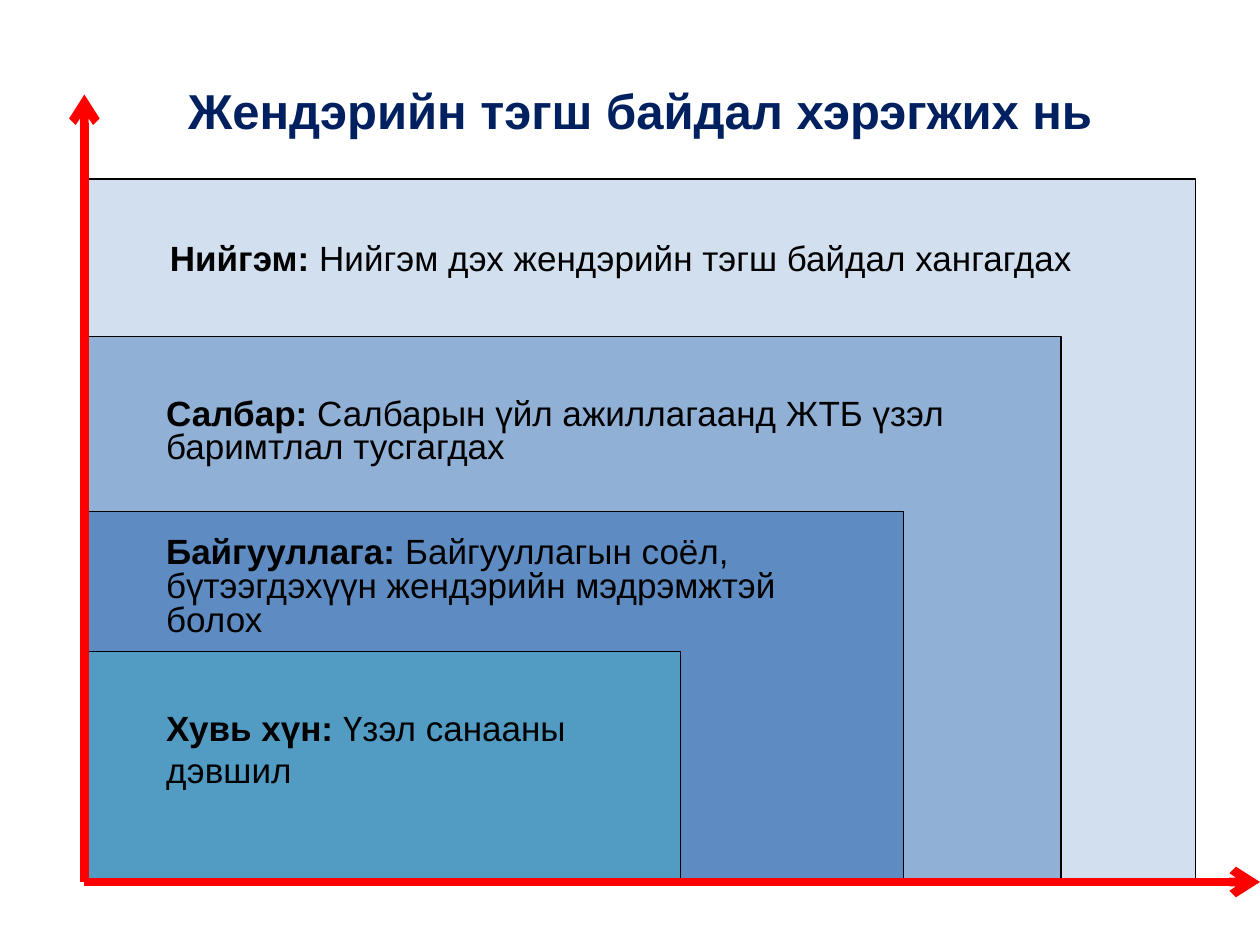
from lxml.etree import SubElement
from pptx import Presentation
from pptx.dml.color import RGBColor
from pptx.enum.shapes import MSO_CONNECTOR, MSO_SHAPE
from pptx.enum.text import MSO_ANCHOR, MSO_AUTO_SIZE, PP_ALIGN
from pptx.oxml.ns import qn
from pptx.util import Inches, Pt

COLORS = {
    "title": "002060",
    "text": "000000",
    "border": "000000",
    "blue": "4F81BD",
    "teal": "33CCCC",
    "axis": "FF0000",
}
FONT = "Arial"
ORIGIN_X, ORIGIN_Y = 0.67, 7.0

# Nested levels, outermost first: top, width, fill colour, opacity in percent
LEVELS = [
    (1.42, 8.82, "blue", 25),
    (2.67, 7.75, "blue", 49),
    (4.06, 6.5, "blue", 76),
    (5.17, 4.73, "teal", 26),
]

# Level labels: left, top, width, height, line spacing, term, description
LABELS = [
    (1.22, 5.56, 3.55, 0.77, 1.0, "Хувь хүн:", " Үзэл санааны дэвшил"),
    (1.22, 4.22, 5.43, 1.36, 0.8, "Байгууллага:",
     " Байгууллагын соёл, бүтээгдэхүүн жендэрийн мэдрэмжтэй болох"),
    (1.22, 3.12, 7.11, 1.09, 0.8, "Салбар:",
     " Салбарын үйл ажиллагаанд ЖТБ үзэл баримтлал тусгагдах"),
    (1.25, 1.83, 8.17, 0.44, 1.0, "Нийгэм:",
     " Нийгэм дэх жендэрийн тэгш байдал хангагдах"),
]


def rgb(name):
    return RGBColor.from_string(COLORS[name])


def style_font(font, size, color):
    font.name = FONT
    font.size = Pt(size)
    font.color.rgb = rgb(color)


def add_title(slide, left, top, width, height):
    title = slide.shapes.title
    title.left, title.top = Inches(left), Inches(top)
    title.width, title.height = Inches(width), Inches(height)
    tf = title.text_frame
    tf.text = "Жендэрийн тэгш байдал хэрэгжих нь"
    tf.vertical_anchor = MSO_ANCHOR.MIDDLE
    p = tf.paragraphs[0]
    p.alignment = PP_ALIGN.CENTER
    style_font(p.font, 28, "title")
    p.font.bold = True


def add_level(slide, left, top, width, height, color, opacity):
    sp = slide.shapes.add_shape(MSO_SHAPE.RECTANGLE, Inches(left), Inches(top),
                                Inches(width), Inches(height))
    sp.shadow.inherit = False
    sp.fill.solid()
    sp.fill.fore_color.rgb = rgb(color)
    fill_color = sp._element.spPr.find(qn("a:solidFill"))[0]
    SubElement(fill_color, qn("a:alpha"), val=str(opacity * 1000))
    sp.line.color.rgb = rgb("border")
    sp.line.width = Pt(0.75)


def add_label(slide, left, top, width, height, spacing, term, description):
    box = slide.shapes.add_textbox(Inches(left), Inches(top),
                                   Inches(width), Inches(height))
    tf = box.text_frame
    tf.word_wrap = True
    tf.auto_size = MSO_AUTO_SIZE.SHAPE_TO_FIT_TEXT
    p = tf.paragraphs[0]
    p.line_spacing = spacing
    style_font(p.font, 20, "text")
    for text, bold in ((term, True), (description, False)):
        r = p.add_run()
        r.text = text
        r.font.bold = bold


def add_axis(slide, end_x, end_y):
    line = slide.shapes.add_connector(MSO_CONNECTOR.STRAIGHT, Inches(ORIGIN_X),
                                      Inches(ORIGIN_Y), Inches(end_x), Inches(end_y))
    line.line.color.rgb = rgb("axis")
    line.line.width = Pt(5)
    SubElement(line.line._get_or_add_ln(), qn("a:tailEnd"), type="arrow")
    SubElement(line._element.spPr, qn("a:effectLst"))


def main():
    prs = Presentation()
    prs.slide_width, prs.slide_height = Inches(10), Inches(7.5)
    slide = prs.slides.add_slide(prs.slide_layouts[5])

    add_title(slide, 0.58, 0.25, 9, 1.25)

    # Nested levels share the origin corner
    for top, width, color, opacity in LEVELS:
        add_level(slide, ORIGIN_X, top, width, ORIGIN_Y - top, color, opacity)
    for label in LABELS:
        add_label(slide, *label)

    # Horizontal and vertical axes
    add_axis(slide, 10, ORIGIN_Y)
    add_axis(slide, ORIGIN_X, 0.75)

    prs.save("out.pptx")


if __name__ == "__main__":
    main()
